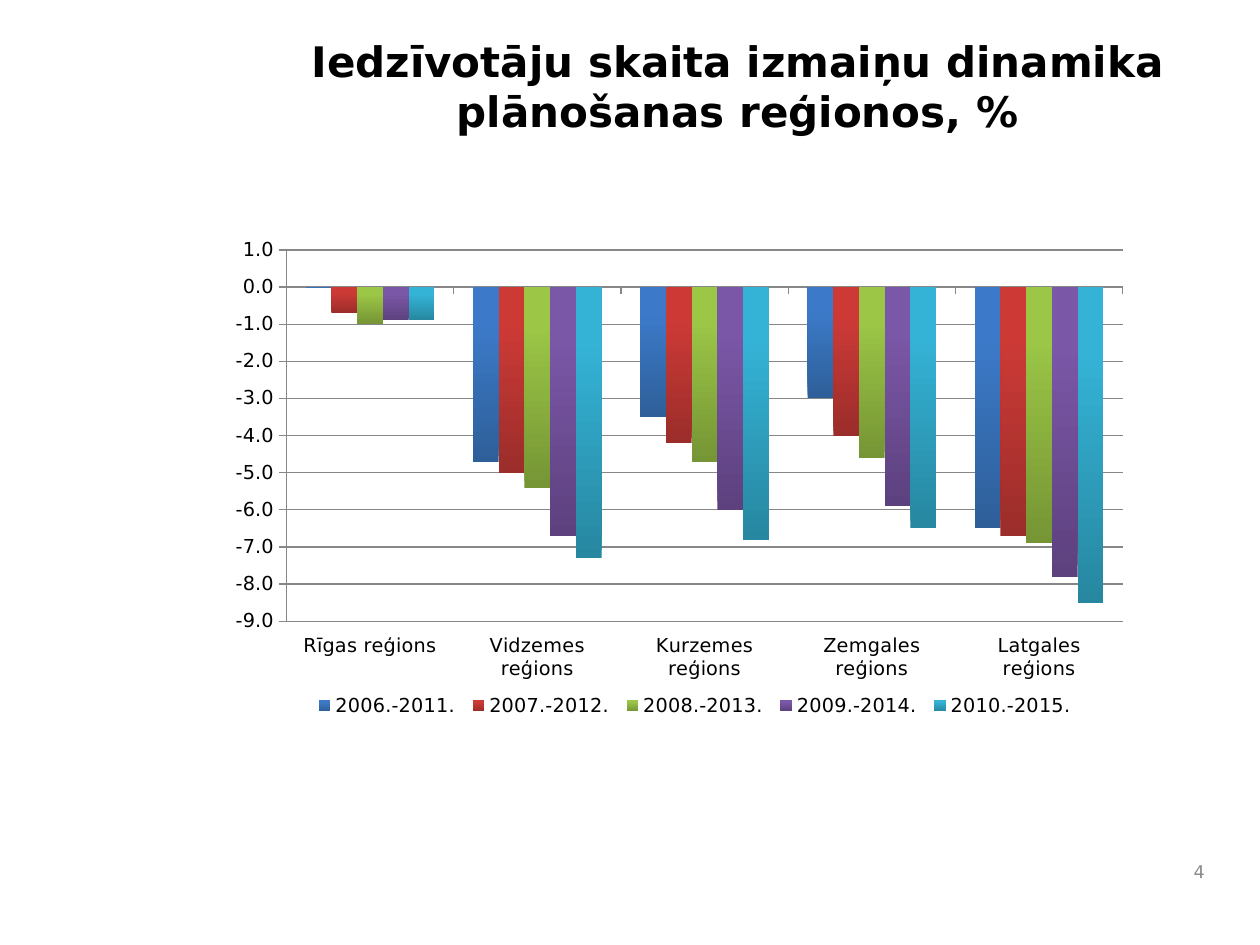
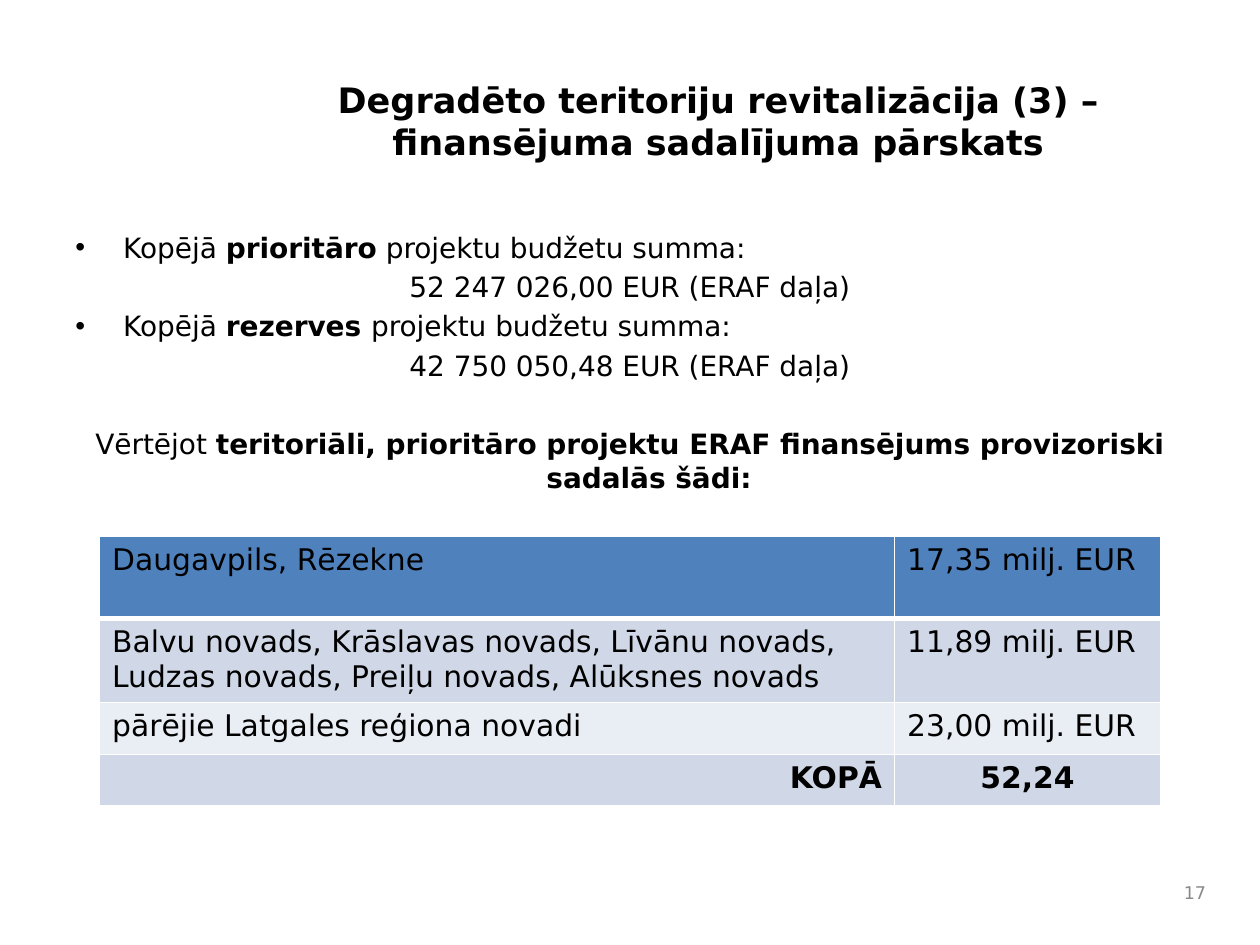
from dataclasses import dataclass

from lxml import etree
from pptx import Presentation
from pptx.chart.data import CategoryChartData
from pptx.dml.color import RGBColor
from pptx.enum.chart import XL_CHART_TYPE, XL_LEGEND_POSITION, XL_TICK_LABEL_POSITION, XL_TICK_MARK
from pptx.enum.text import MSO_ANCHOR, MSO_AUTO_SIZE, PP_ALIGN
from pptx.oxml import parse_xml
from pptx.oxml.ns import nsdecls, qn
from pptx.util import Inches, Pt

LEFT, CENTER, RIGHT = PP_ALIGN.LEFT, PP_ALIGN.CENTER, PP_ALIGN.RIGHT
TOP, MIDDLE = MSO_ANCHOR.TOP, MSO_ANCHOR.MIDDLE
COLUMNS = XL_CHART_TYPE.COLUMN_CLUSTERED
BOTTOM = XL_LEGEND_POSITION.BOTTOM
LOW = XL_TICK_LABEL_POSITION.LOW
OUTSIDE = XL_TICK_MARK.OUTSIDE


@dataclass(frozen=True)
class Theme:
    font: str = "DejaVu Sans"
    text: str = "000000"
    number: str = "898989"
    axis: str = "878787"
    border: str = "FFFFFF"
    header: str = "4F81BD"
    bands: tuple = ("D0D8E8", "E9EDF4")
    title_size: int = 24
    subtitle_size: int = 20
    table_size: int = 17
    body_size: int = 16
    chart_size: int = 11
    number_size: int = 10


THEME = Theme()

# Content: population chart
CHART_TITLE = "Iedzīvotāju skaita izmaiņu dinamika plānošanas reģionos, %"
REGIONS = ["Rīgas reģions", "Vidzemes reģions", "Kurzemes reģions",
           "Zemgales reģions", "Latgales reģions"]
# Period, values, dark and light gradient colours
PERIODS = [
    ("2006.-2011.", (0, -4.7, -3.5, -3, -6.5), "2E5F99", "3C7AC9"),
    ("2007.-2012.", (-0.7, -5, -4.2, -4, -6.7), "9B2D2A", "CD3A36"),
    ("2008.-2013.", (-1, -5.4, -4.7, -4.6, -6.9), "769535", "9BC646"),
    ("2009.-2014.", (-0.9, -6.7, -6, -5.9, -7.8), "5D417E", "7B57A7"),
    ("2010.-2015.", (-0.9, -7.3, -6.8, -6.5, -8.5), "2787A0", "34B3D6"),
]
PLOT_AREA = (0.087, 0.051, 0.897, 0.737)
LEGEND_AREA = (0.11, 0.92, 0.83, 0.07)

# Content: funding overview; a paragraph is a list of (text, bold) runs
FUNDING_TITLE = [[("Degradēto teritoriju revitalizācija (3) – ", True)],
                 [("finansējuma sadalījuma pārskats ", True)]]
# Runs, bulleted, space before in points
BUDGET = [
    ([("Kopējā ", False), ("prioritāro", True), (" projektu budžetu summa:", False)], True, 0),
    ([("52 247 026,00 EUR (ERAF daļa)", False)], False, 3.2),
    ([("Kopējā ", False), ("rezerves ", True), ("projektu budžetu summa:", False)], True, 3.2),
    ([("42 750 050,48 EUR (ERAF daļa)", False)], False, 3.2),
    ([("Vērtējot ", False),
      ("teritoriāli, prioritāro projektu ERAF finansējums provizoriski sadalās šādi: ", True)],
     False, 25.8),
]
FUNDING = [
    ("Daugavpils, Rēzekne", "17,35 milj. EUR"),
    ("Balvu novads, Krāslavas novads, Līvānu novads, "
     "Ludzas novads, Preiļu novads, Alūksnes novads", "11,89 milj. EUR"),
    ("pārējie Latgales reģiona novadi", "23,00 milj. EUR"),
    ("KOPĀ", "52,24"),
]
COLUMN_WIDTHS = (6.31, 2.11)
ROW_HEIGHTS = (0.65, 0.65, 0.41, 0.41)


# Helpers
def rgb(value):
    return RGBColor.from_string(value)


def write(tf, paragraphs, size, color=THEME.text, align=LEFT, anchor=TOP):
    """Fill a text frame with paragraphs of (text, bold) runs."""
    tf.word_wrap = True
    tf.vertical_anchor = anchor
    for i, runs in enumerate(paragraphs):
        p = tf.paragraphs[0] if i == 0 else tf.add_paragraph()
        p.alignment = align
        for text, bold in runs:
            r = p.add_run()
            r.text = text
            r.font.name = THEME.font
            r.font.size = Pt(size)
            r.font.bold = bold
            r.font.color.rgb = rgb(color)


def add_box(slide, box):
    return slide.shapes.add_textbox(*map(Inches, box)).text_frame


def add_slide(prs, title, title_box, size, anchor, number, number_box):
    slide = prs.slides.add_slide(prs.slide_layouts[5])
    sp = slide.shapes.title
    sp.left, sp.top, sp.width, sp.height = map(Inches, title_box)
    sp.text_frame.auto_size = MSO_AUTO_SIZE.NONE
    write(sp.text_frame, title, size, align=CENTER, anchor=anchor)
    write(add_box(slide, number_box), [[(number, False)]], THEME.number_size,
          color=THEME.number, align=RIGHT, anchor=MIDDLE)
    return slide


def manual_layout(area, inner=False):
    target = '<c:layoutTarget val="inner"/>' if inner else ""
    modes = "".join(f'<c:{k}Mode val="edge"/>' for k in "xy")
    sizes = "".join(f'<c:{k} val="{v}"/>' for k, v in zip("xywh", area))
    return parse_xml(f'<c:layout {nsdecls("c")}><c:manualLayout>{target}{modes}{sizes}'
                     '</c:manualLayout></c:layout>')


def set_layout(parent, layout, index):
    for old in parent.findall(qn("c:layout")):
        parent.remove(old)
    parent.insert(index, layout)


def add_population_chart(slide):
    data = CategoryChartData(number_format="0.0")
    data.categories = REGIONS
    for name, values, _, _ in PERIODS:
        data.add_series(name, values)
    box = map(Inches, (1.63, 1.78, 7.4, 4))
    chart = slide.shapes.add_chart(COLUMNS, *box, data).chart
    chart.has_title = False
    chart.font.name = THEME.font
    chart.font.size = Pt(THEME.chart_size)
    chart.font.color.rgb = rgb(THEME.text)

    # Columns
    plot = chart.plots[0]
    plot.gap_width, plot.overlap, plot.vary_by_categories = 150, 0, False
    for series, (_, _, dark, light) in zip(plot.series, PERIODS):
        series.invert_if_negative = False
        fill = series.format.fill
        fill.gradient()
        fill.gradient_angle = 90
        for stop, color, position in zip(fill.gradient_stops, (dark, light), (0, 0.8)):
            stop.color.rgb = rgb(color)
            stop.position = position

    # Axes
    values, regions = chart.value_axis, chart.category_axis
    values.minimum_scale, values.maximum_scale, values.major_unit = -9, 1, 1
    values.has_major_gridlines = True
    values.tick_labels.number_format = "0.0"
    values.tick_labels.number_format_is_linked = False
    regions.tick_label_position = LOW
    for axis in (values, regions):
        axis.major_tick_mark = OUTSIDE
    for part in (values, regions, values.major_gridlines):
        part.format.line.color.rgb = rgb(THEME.axis)
        part.format.line.width = Pt(0.75)

    # Legend and plot area
    chart.has_legend = True
    chart.legend.position = BOTTOM
    chart.legend.include_in_layout = False
    root = chart.element
    set_layout(root.find(".//" + qn("c:plotArea")), manual_layout(PLOT_AREA, inner=True), 0)
    set_layout(root.find(".//" + qn("c:legend")), manual_layout(LEGEND_AREA), 1)


def add_budget_text(slide):
    tf = add_box(slide, (0.5, 1.78, 9, 4.95))
    write(tf, [runs for runs, _, _ in BUDGET], THEME.body_size)
    indent = Inches(0.38)
    for p, (_, bulleted, space) in zip(tf.paragraphs, BUDGET):
        p.alignment = LEFT if bulleted else CENTER
        p.space_before = Pt(space)
        pPr = p._p.get_or_add_pPr()
        pPr.set("marL", str(indent))
        pPr.set("indent", str(-indent))
        if bulleted:
            etree.SubElement(pPr, qn("a:buFont"), typeface="Arial")
            etree.SubElement(pPr, qn("a:buChar"), char="•")
        else:
            etree.SubElement(pPr, qn("a:buNone"))


def add_borders(cell, top, bottom):
    tcPr = cell._tc.get_or_add_tcPr()
    for side, width in (("L", 1), ("R", 1), ("T", top), ("B", bottom)):
        ln = etree.SubElement(tcPr, qn(f"a:ln{side}"), w=str(Pt(width)))
        fill = etree.SubElement(ln, qn("a:solidFill"))
        etree.SubElement(fill, qn("a:srgbClr"), val=THEME.border)


def add_funding_table(slide):
    box = map(Inches, (0.79, 4.26, sum(COLUMN_WIDTHS), sum(ROW_HEIGHTS)))
    table = slide.shapes.add_table(len(FUNDING), len(COLUMN_WIDTHS), *box).table
    for column, width in zip(table.columns, COLUMN_WIDTHS):
        column.width = Inches(width)
    for i, (row, height) in enumerate(zip(table.rows, ROW_HEIGHTS)):
        row.height = Inches(height)
        total = i == len(FUNDING) - 1
        aligns = (RIGHT, CENTER) if total else (LEFT, LEFT)
        for cell, text, align in zip(row.cells, FUNDING[i], aligns):
            add_borders(cell, top=3 if i == 1 else 1, bottom=3 if i == 0 else 1)
            cell.fill.solid()
            cell.fill.fore_color.rgb = rgb(THEME.bands[(i - 1) % 2] if i else THEME.header)
            write(cell.text_frame, [[(text, total)]], THEME.table_size, align=align)


def main():
    prs = Presentation()
    prs.slide_width, prs.slide_height = Inches(10), Inches(7.5)

    # Population change by region
    slide = add_slide(prs, [[(CHART_TITLE, True)]], (2.21, 0.23, 7.29, 0.54),
                      THEME.title_size, TOP, "4", (9.33, 6.75, 0.33, 0.33))
    add_population_chart(slide)

    # Funding overview
    slide = add_slide(prs, FUNDING_TITLE, (2, 0.33, 7.5, 1.25),
                      THEME.subtitle_size, MIDDLE, "17", (9.21, 6.92, 0.46, 0.33))
    add_budget_text(slide)
    add_funding_table(slide)

    prs.save("out.pptx")


if __name__ == "__main__":
    main()
